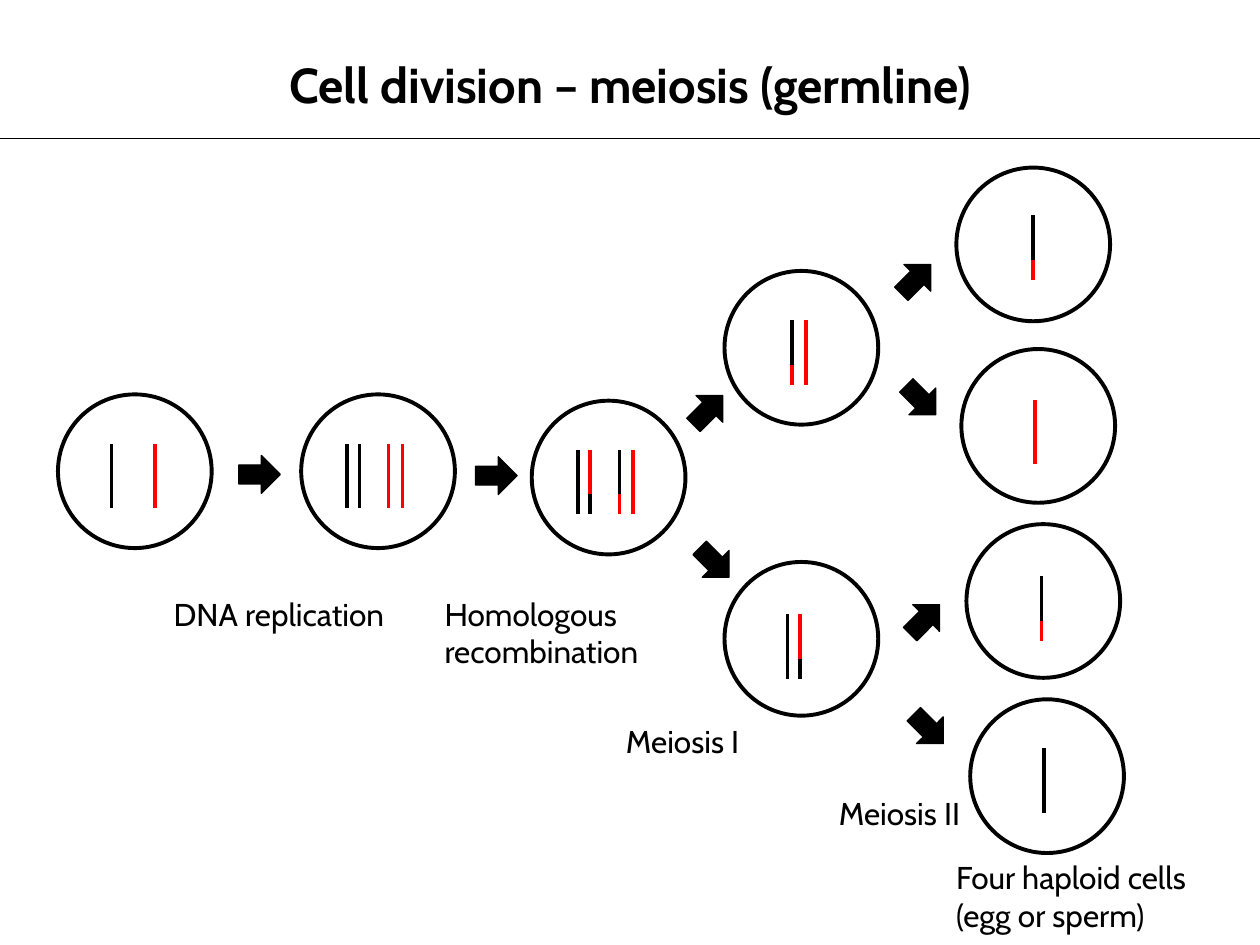
from dataclasses import dataclass

from pptx import Presentation
from pptx.dml.color import RGBColor
from pptx.enum.shapes import MSO_CONNECTOR, MSO_SHAPE
from pptx.enum.text import MSO_ANCHOR, MSO_AUTO_SIZE, PP_ALIGN
from pptx.oxml.ns import qn
from pptx.util import Inches, Pt
from lxml.etree import SubElement


@dataclass(frozen=True)
class Theme:
    black: RGBColor = RGBColor(0, 0, 0)
    red: RGBColor = RGBColor(255, 0, 0)
    font: str = "Cabin"
    title_size: Pt = Pt(28)
    label_size: Pt = Pt(18)
    thin: Pt = Pt(0.75)
    chromosome: Pt = Pt(2)
    membrane: Pt = Pt(2.25)


THEME = Theme()
WIDTH, HEIGHT = 100, 75  # grid of columns and rows, ten to the inch
CELL_SIZE = 12.2
ARROW_WIDTH, ARROW_HEIGHT = 3, 3.3
# Chromosome length and crossover point, as shares of the cell
LENGTH, CROSSOVER = 0.42, 0.29
EAST, NORTH_EAST, SOUTH_EAST = 270, 225, 315

# Chromosome colours: upper part, lower part
MATERNAL = (THEME.black, THEME.black)
PATERNAL = (THEME.red, THEME.red)
MATERNAL_CROSSED = (THEME.red, THEME.black)
PATERNAL_CROSSED = (THEME.black, THEME.red)

# Cells: left, top, share of the cell above the chromosomes,
# then each chromosome's share across the cell and its colours
CELLS = [
    # Parent cell, replication, recombination
    (4.6, 31.3, 0.32, [(0.35, MATERNAL), (0.63, PATERNAL)]),
    (23.9, 31.3, 0.32, [(0.30, MATERNAL), (0.38, MATERNAL),
                        (0.57, PATERNAL), (0.66, PATERNAL)]),
    (42.2, 31.8, 0.32, [(0.30, MATERNAL), (0.38, MATERNAL_CROSSED),
                        (0.57, PATERNAL_CROSSED), (0.66, PATERNAL)]),
    # Meiosis I
    (57.5, 21.5, 0.32, [(0.44, PATERNAL_CROSSED), (0.53, PATERNAL)]),
    (57.5, 44.6, 0.34, [(0.41, MATERNAL), (0.49, MATERNAL_CROSSED)]),
    # Meiosis II
    (75.9, 13.3, 0.31, [(0.50, PATERNAL_CROSSED)]),
    (76.3, 27.7, 0.33, [(0.48, PATERNAL)]),
    (76.7, 41.6, 0.34, [(0.49, PATERNAL_CROSSED)]),
    (77.0, 55.5, 0.32, [(0.48, MATERNAL)]),
]

# Arrows: left, top, direction
ARROWS = [
    (19.1, 36.0, EAST), (37.9, 36.1, EAST),
    (54.7, 30.9, NORTH_EAST), (55.2, 43.0, SOUTH_EAST),
    (71.2, 20.5, NORTH_EAST), (71.6, 30.1, SOUTH_EAST),
    (71.9, 47.5, NORTH_EAST), (72.2, 56.2, SOUTH_EAST),
]

# Labels: box, paragraphs, wrapping
LABELS = [
    ((12.8, 46.7, 19, 4), ["DNA replication"], False),
    ((34.3, 46.7, 22.8, 7.1), ["Homologous recombination"], True),
    ((48.7, 56.8, 11.4, 4), ["Meiosis I"], True),
    ((65.6, 62.5, 13.4, 4), ["Meiosis II"], True),
    ((74.9, 67.6, 22.8, 7.1), ["Four haploid cells", "(egg or sperm)"], True),
]


def grid(*units):
    return [Inches(unit / 10) for unit in units]


def style_text(paragraph, size, bold=False):
    paragraph.font.name = THEME.font
    paragraph.font.size = size
    paragraph.font.bold = bold
    paragraph.font.color.rgb = THEME.black


def draw_line(slide, start, end, color, width):
    line = slide.shapes.add_connector(MSO_CONNECTOR.STRAIGHT,
                                      *grid(*start, *end))
    line.line.color.rgb = color
    line.line.width = width
    SubElement(line._element.spPr, qn("a:effectLst"))


def draw_header(slide, box):
    left, top, width, height = box
    # Rule below the title
    draw_line(slide, (left, 11), (left + width, 11), THEME.black, THEME.thin)
    title = slide.shapes.title
    title.left, title.top, title.width, title.height = grid(*box)
    frame = title.text_frame
    frame.text = "Cell division – meiosis (germline)"
    frame.word_wrap = True
    frame.auto_size = MSO_AUTO_SIZE.SHAPE_TO_FIT_TEXT
    frame.vertical_anchor = MSO_ANCHOR.TOP
    frame.paragraphs[0].alignment = PP_ALIGN.CENTER
    style_text(frame.paragraphs[0], THEME.title_size, bold=True)


def draw_cell(slide, box, top_share, chromosomes):
    left, top, width, height = box
    # Membrane
    membrane = slide.shapes.add_shape(MSO_SHAPE.OVAL, *grid(*box))
    membrane.shadow.inherit = False
    membrane.fill.background()
    membrane.line.color.rgb = THEME.black
    membrane.line.width = THEME.membrane
    # Chromosomes, with the exchanged part laid over the full strand
    start = top + top_share * height
    for across, (upper, lower) in chromosomes:
        x = left + across * width
        draw_line(slide, (x, start), (x, start + LENGTH * height),
                  lower, THEME.chromosome)
        if upper != lower:
            draw_line(slide, (x, start), (x, start + CROSSOVER * height),
                      upper, THEME.chromosome)


def draw_arrow(slide, box, direction):
    arrow = slide.shapes.add_shape(MSO_SHAPE.DOWN_ARROW, *grid(*box))
    arrow.rotation = direction
    arrow.shadow.inherit = False
    arrow.fill.solid()
    arrow.fill.fore_color.rgb = THEME.black
    arrow.line.color.rgb = THEME.black
    arrow.line.width = THEME.thin


def draw_label(slide, box, lines, wrap):
    frame = slide.shapes.add_textbox(*grid(*box)).text_frame
    frame.word_wrap = wrap
    frame.auto_size = MSO_AUTO_SIZE.SHAPE_TO_FIT_TEXT
    frame.text = "\n".join(lines)
    for paragraph in frame.paragraphs:
        style_text(paragraph, THEME.label_size)


def main():
    deck = Presentation()
    deck.slide_width, deck.slide_height = grid(WIDTH, HEIGHT)
    slide = deck.slides.add_slide(deck.slide_layouts.get_by_name("Title Only"))
    draw_header(slide, (0, 3.8, WIDTH, 5.7))
    for left, top, top_share, chromosomes in CELLS:
        draw_cell(slide, (left, top, CELL_SIZE, CELL_SIZE),
                  top_share, chromosomes)
    for left, top, direction in ARROWS:
        draw_arrow(slide, (left, top, ARROW_WIDTH, ARROW_HEIGHT), direction)
    for box, lines, wrap in LABELS:
        draw_label(slide, box, lines, wrap)
    deck.save("out.pptx")


if __name__ == "__main__":
    main()
